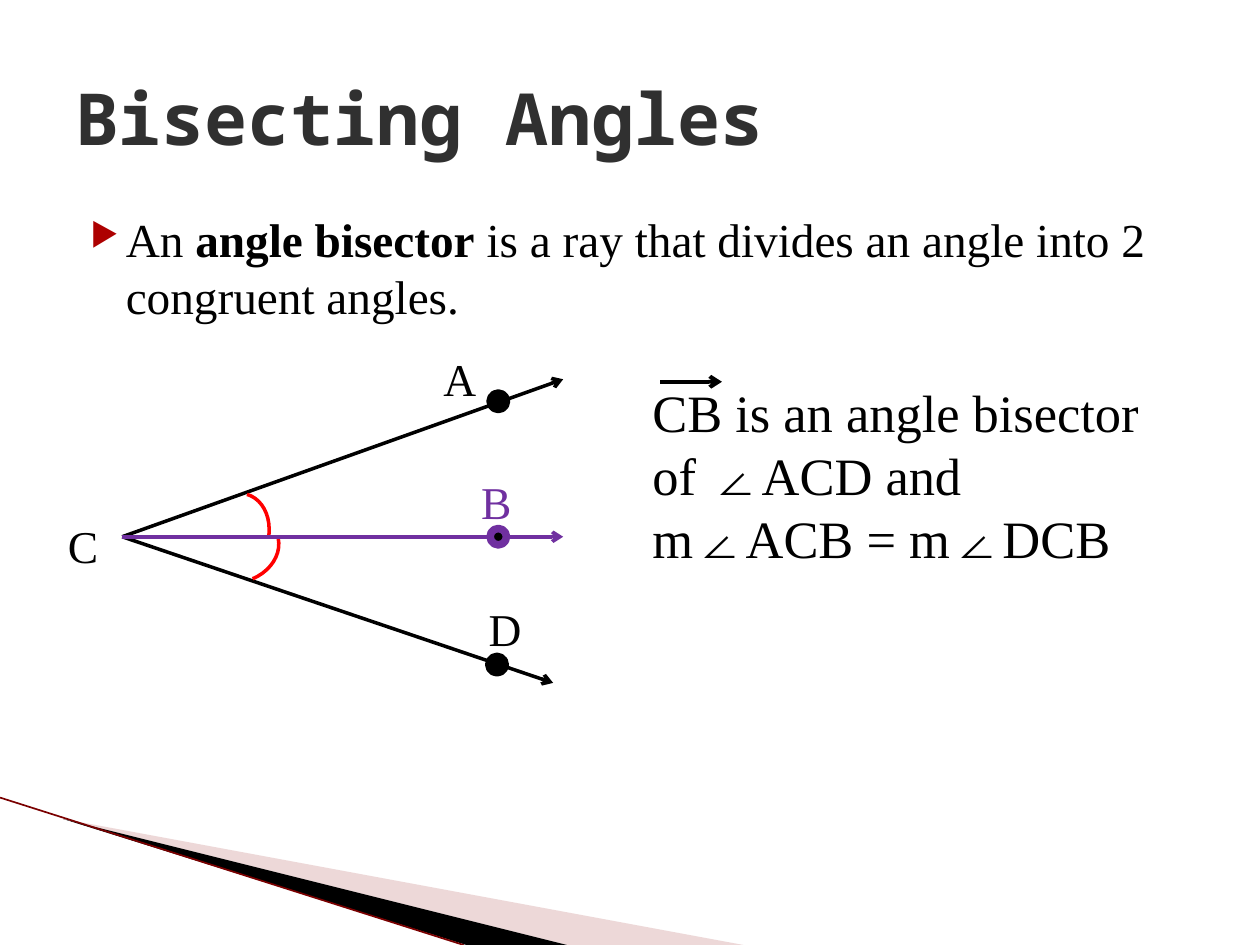
import pptx
import pptx.util
import pptx.dml.color
import pptx.enum.shapes
import pptx.enum.text
import pptx.oxml.ns
import lxml.etree

Color = pptx.dml.color.RGBColor
BLACK = Color(0x00, 0x00, 0x00)
GRAY = Color(0x30, 0x30, 0x30)
RED = Color(0xFF, 0x00, 0x00)
MAROON = Color(0x7A, 0x00, 0x00)
BRICK = Color(0xAD, 0x01, 0x01)
ROSE = Color(0xD2, 0x9E, 0x9E)
PURPLE = Color(0x70, 0x30, 0xA0)
SERIF = "Times New Roman"
MONO = "Noto Sans Mono"
WIDE = pptx.util.Inches(10)
HIGH = pptx.util.Inches(7.5)
COLS = 100
CELL = WIDE // COLS
SHAPE = pptx.enum.shapes.MSO_SHAPE


def cells(*counts):
    return [round(count * CELL) for count in counts]


def add_tag(parent, name, **marks):
    tag = lxml.etree.SubElement(parent, pptx.oxml.ns.qn("a:" + name))
    for key, value in marks.items():
        tag.set(key, str(value))
    return tag


def add_run(para, words, size, font, color, bold=False):
    run = para.add_run()
    run.text = words
    run.font.size = pptx.util.Pt(size)
    run.font.name = font
    run.font.bold = bold
    run.font.color.rgb = color


def add_text(shapes, box, grow=False):
    frame = shapes.add_textbox(*cells(*box)).text_frame
    frame.word_wrap = True
    if grow:
        frame.auto_size = pptx.enum.text.MSO_AUTO_SIZE.SHAPE_TO_FIT_TEXT
    return frame


def add_line(shapes, start, end, color, width, arrow=True):
    kind = pptx.enum.shapes.MSO_CONNECTOR.STRAIGHT
    line = shapes.add_connector(kind, *cells(*start, *end))
    line.line.color.rgb = color
    line.line.width = pptx.util.Pt(width)
    if arrow:
        add_tag(line.line._get_or_add_ln(), "tailEnd", type="arrow")
    add_tag(line._element.spPr, "effectLst")


def add_dot(shapes, x, y, color):
    size = 1.3
    dot = shapes.add_shape(SHAPE.OVAL, *cells(x - size / 2, y - size / 2, size, size))
    dot.shadow.inherit = False
    dot.fill.solid()
    dot.fill.fore_color.rgb = BLACK
    dot.line.color.rgb = color
    dot.line.width = pptx.util.Pt(4.33)


def add_arc(shapes, box, turn):
    arc = shapes.add_shape(SHAPE.ARC, *cells(*box))
    arc.shadow.inherit = False
    arc.adjustments[0] = 161.73
    arc.adjustments[1] = 205.33
    arc.rotation = turn
    arc.fill.background()
    arc.line.color.rgb = RED
    arc.line.width = pptx.util.Pt(2)


def add_wedge(shapes, points, color):
    pen = shapes.build_freeform(*points[0], scale=CELL)
    pen.add_line_segments(points[1:], close=True)
    wedge = pen.convert_to_shape()
    wedge.shadow.inherit = False
    wedge.fill.solid()
    wedge.fill.fore_color.rgb = color
    wedge.line.fill.background()
    return wedge


def draw_swoosh(shapes, box):
    x, y, w, h = box
    low = y + h
    tip = (x + 5.4, y + 1.7)
    pale = add_wedge(shapes, [tip, (x + w, low), (x + 45.3, low)], ROSE)
    add_tag(pale.fill.fore_color._color._xClr, "alpha", val=40000)
    add_wedge(shapes, [tip, (x + 45.3, low), (x + 36.8, low)], BLACK)
    add_line(shapes, (x, y), (x + 36.8, low), MAROON, 0.95, False)


def draw_title(shapes, box):
    frame = add_text(shapes, box)
    frame.vertical_anchor = pptx.enum.text.MSO_ANCHOR.MIDDLE
    add_run(frame.paragraphs[0], "Bisecting Angles", 41, MONO, GRAY, True)


def draw_body(shapes, box):
    para = add_text(shapes, box).paragraphs[0]
    props = para._p.get_or_add_pPr()
    left, hang = cells(4, -2.8)
    props.set("marL", str(left))
    props.set("indent", str(hang))
    add_tag(add_tag(props, "buClr"), "srgbClr", val=BRICK)
    add_tag(props, "buSzPct", val=68000)
    add_tag(props, "buChar", char="▶")
    for words, bold in (
        ("An ", False),
        ("angle bisector", True),
        (" is a ray that divides an angle into 2 congruent angles.", False),
    ):
        add_run(para, words, 27, SERIF, BLACK, bold)


def draw_label(shapes, x, y, name, color=BLACK):
    frame = add_text(shapes, (x, y, 4.3, 5.4), True)
    add_run(frame.paragraphs[0], name, 26, SERIF, color)


def draw_angle(shapes, box):
    x, y, w, h = box
    mid = y + 12.5
    add_line(shapes, (x, mid), (x + w, y), BLACK, 2)
    add_line(shapes, (x, mid), (x + 34.2, y + h), BLACK, 2)
    add_dot(shapes, x + 29.75, y + 22.65, BLACK)
    add_dot(shapes, x + 29.85, y + 1.75, BLACK)
    arcs = shapes.add_group_shape().shapes
    add_arc(arcs, (x + 6.3, y + 9, 5.3, 6.8), 16.8)
    add_arc(arcs, (x + 6.1, y + 9.8, 5.7, 7), 78.9)
    draw_label(shapes, x - 5.3, y + 10.5, "C")
    draw_label(shapes, x + 24.5, y - 2.7, "A")
    ray = shapes.add_group_shape().shapes
    add_line(ray, (x, mid), (x + w, mid), PURPLE, 2)
    add_dot(ray, x + 29.85, mid, PURPLE)
    draw_label(ray, x + 27.5, y + 7, "B", PURPLE)
    draw_label(shapes, x + 28.1, y + 17.1, "D")


def draw_claim(shapes, box):
    x, y, w, h = box
    para = add_text(shapes, box, True).paragraphs[0]
    add_run(para, "CB is an angle bisector of ∠ACD and m∠ACB = m∠DCB", 30, SERIF, BLACK)
    add_line(shapes, (x + 1.6, y + 0.6), (x + 6.5, y + 0.6), BLACK, 2.25)


def main():
    deck = pptx.Presentation()
    deck.slide_width, deck.slide_height = WIDE, HIGH
    shapes = deck.slides.add_slide(deck.slide_layouts[6]).shapes
    draw_swoosh(shapes, (0, 63.3, 59, 11.7))
    draw_body(shapes, (5, 16.2, 90, 49.5))
    draw_title(shapes, (5, 3, 90, 12.5))
    draw_angle(shapes, (9.7, 30.1, 35, 24.1))
    draw_claim(shapes, (50.8, 29.7, 43.3, 16.2))
    deck.save("out.pptx")


if __name__ == "__main__":
    main()
